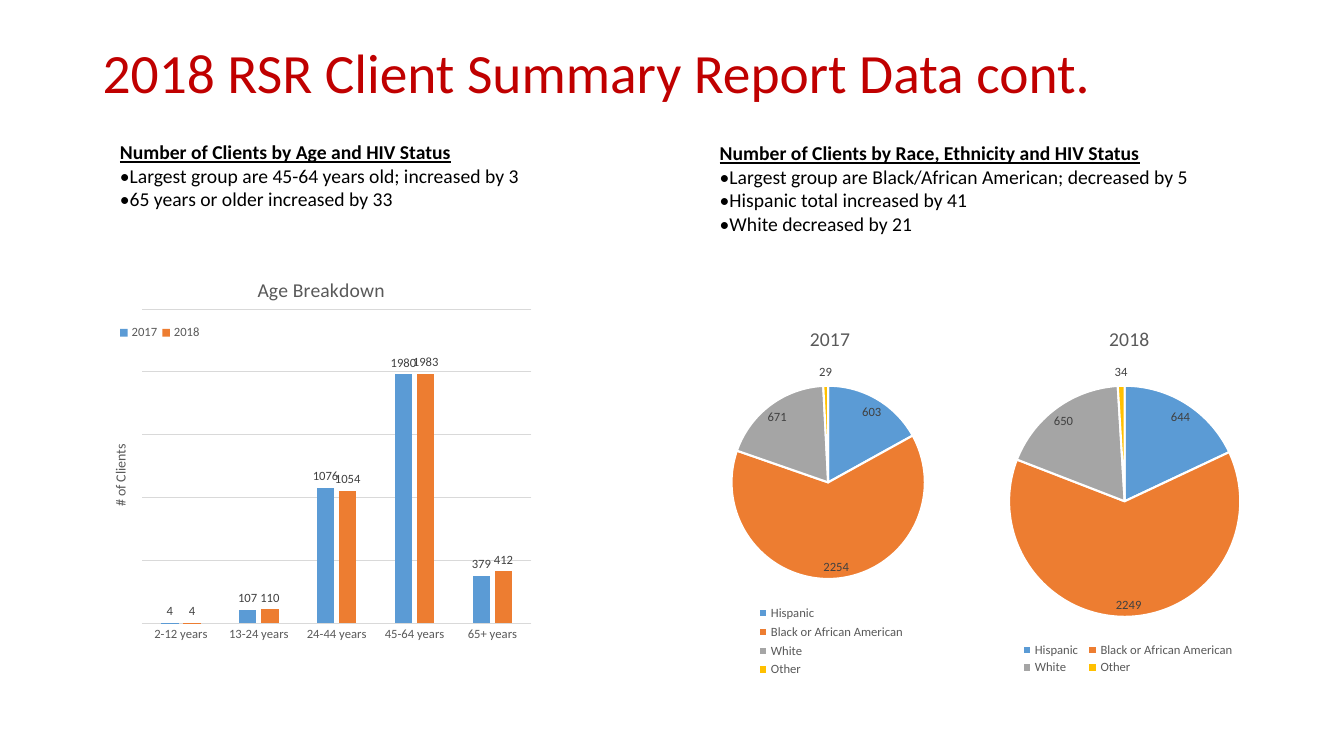
from lxml import etree
from pptx import Presentation
from pptx.chart import data as chart_data
from pptx.dml.color import RGBColor
from pptx.enum import chart as kinds, text
from pptx.oxml import ns
from pptx.util import Inches, Pt

FONT = "Calibri"
COLORS = {
    "title": "C00000", "body": "000000", "caption": "595959", "label": "404040",
    "grid": "D9D9D9", "white": "FFFFFF", "blue": "5B9BD5", "orange": "ED7D31",
    "gray": "A5A5A5", "gold": "FFC000",
}
TITLE = "2018 RSR Client Summary Report Data cont."
NOTES = [
    {"at": (1.09, 1.34, 4.61, 0.81), "wrap": True, "lines": [
        "Number of Clients by Age and HIV Status",
        "•Largest group are 45-64 years old; increased by 3",
        "•65 years or older increased by 33"]},
    {"at": (7.04, 1.35, 4.94, 1.04), "wrap": False, "lines": [
        "Number of Clients by Race, Ethnicity and HIV Status",
        "•Largest group are Black/African American; decreased by 5",
        "•Hispanic total increased by 41",
        "•White decreased by 21"]},
]
AGES = {
    "title": "Age Breakdown", "at": (0.92, 2.49, 4.44, 4.27),
    "categories": ["2-12 years", "13-24 years", "24-44 years", "45-64 years", "65+ years"],
    "series": {"2017": (4, 107, 1076, 1980, 379), "2018": (4, 110, 1054, 1983, 412)},
    "title_at": (0.36, 0.05), "plot_at": (0.11, 0.135, 0.87, 0.73),
    "legend_at": (0.05, 0.16, 0.2, 0.06),
}
RACES = ["Hispanic", "Black or African American", "White", "Other"]
PIES = [
    {"title": "2017", "at": (6.75, 3, 2.9, 3.76), "categories": RACES,
     "series": {"2017": (603, 2254, 671, 29)},
     "title_at": (0.43, 0.05), "plot_at": (0.17, 0.22, 0.67, 0.51),
     "legend_at": (0.24, 0.79, 0.55, 0.21)},
    {"title": "2018", "at": (9.58, 3, 3.15, 3.76), "categories": RACES,
     "series": {"2018": (644, 2249, 650, 34)},
     "title_at": (0.44, 0.05), "plot_at": (0.135, 0.22, 0.73, 0.61),
     "legend_at": (0.16, 0.89, 0.7, 0.1)},
]
SERIES_COLORS = ["blue", "orange"]
SLICE_COLORS = ["blue", "orange", "gray", "gold"]


def color(name):
    return RGBColor.from_string(COLORS[name])


def style(font, size, name, bold=False):
    font.name, font.size, font.bold = FONT, Pt(size), bold
    font.color.rgb = color(name)


def paint(part, name):
    part.format.fill.solid()
    part.format.fill.fore_color.rgb = color(name)


def add_text(page, at, lines, size, name, heading=False, wrap=True):
    frame = page.shapes.add_textbox(*map(Inches, at)).text_frame
    frame.word_wrap = wrap
    for index, line in enumerate(lines):
        para = frame.paragraphs[0] if index == 0 else frame.add_paragraph()
        span = para.add_run()
        span.text = line
        style(span.font, size, name, heading and index == 0)
        span.font.underline = heading and index == 0
    return frame


def place(element, fractions, inner=False):
    for old in element.findall(ns.qn("c:layout")):
        element.remove(old)
    layout = etree.Element(ns.qn("c:layout"))
    manual = etree.SubElement(layout, ns.qn("c:manualLayout"))
    settings = [("layoutTarget", "inner")] if inner else []
    settings += [("xMode", "edge"), ("yMode", "edge")]
    settings += zip("xywh", fractions)
    for tag, value in settings:
        etree.SubElement(manual, ns.qn("c:" + tag)).set("val", str(value))
    overlay = element.find(ns.qn("c:overlay"))
    if overlay is None:
        element.insert(0, layout)
    else:
        overlay.addprevious(layout)


def add_title(holder, words, size):
    span = holder.text_frame.paragraphs[0].add_run()
    span.text = words
    style(span.font, size, "caption")


def add_chart(page, content, kind, label_position):
    data = chart_data.CategoryChartData()
    data.categories = content["categories"]
    for name, values in content["series"].items():
        data.add_series(name, values)
    chart = page.shapes.add_chart(kind, *map(Inches, content["at"]), data).chart
    style(chart.font, 10, "body")
    chart.has_title = True
    add_title(chart.chart_title, content["title"], 14)
    chart.has_legend = True
    chart.legend.position = kinds.XL_LEGEND_POSITION.BOTTOM
    chart.legend.include_in_layout = False
    style(chart.legend.font, 9, "caption")
    for series in chart.plots[0].series:
        labels = series.data_labels
        labels.show_value = True
        labels.position = label_position
        style(labels.font, 9, "label")
    area = chart._chartSpace.chart
    place(area.find(ns.qn("c:title")), content["title_at"])
    place(area.find(ns.qn("c:legend")), content["legend_at"])
    place(area.plotArea, content["plot_at"], inner=True)
    return chart


def add_ages(page):
    chart = add_chart(page, AGES, kinds.XL_CHART_TYPE.COLUMN_CLUSTERED,
                      kinds.XL_LABEL_POSITION.OUTSIDE_END)
    plot = chart.plots[0]
    plot.gap_width, plot.overlap, plot.vary_by_categories = 219, -27, False
    for series, name in zip(plot.series, SERIES_COLORS):
        paint(series, name)
    across, up = chart.category_axis, chart.value_axis
    across.major_tick_mark = kinds.XL_TICK_MARK.NONE
    style(across.tick_labels.font, 9, "caption")
    up.visible = False
    up.minimum_scale, up.maximum_scale, up.major_unit = 0, 2500, 500
    up.has_major_gridlines = True
    for line in (across.format.line, up.major_gridlines.format.line):
        line.color.rgb = color("grid")
        line.width = Pt(0.75)
    up.has_title = True
    add_title(up.axis_title, "# of Clients", 10)


def add_pie(page, content):
    chart = add_chart(page, content, kinds.XL_CHART_TYPE.PIE,
                      kinds.XL_LABEL_POSITION.BEST_FIT)
    chart.plots[0].vary_by_categories = True
    for index, name in enumerate(SLICE_COLORS):
        point = chart.plots[0].series[0].points[index]
        paint(point, name)
        point.format.line.color.rgb = color("white")
        point.format.line.width = Pt(1.5)


def main():
    deck = Presentation()
    deck.slide_width, deck.slide_height = Inches(13.33), Inches(7.5)
    page = deck.slides.add_slide(deck.slide_layouts[6])
    heading = add_text(page, (0.92, 0.4, 11.5, 0.7), [TITLE], 39.6, "title")
    heading.vertical_anchor = text.MSO_ANCHOR.MIDDLE
    heading.paragraphs[0].line_spacing = 0.9
    for note in NOTES:
        add_text(page, note["at"], note["lines"], 14, "body", True, note["wrap"])
    add_ages(page)
    for content in PIES:
        add_pie(page, content)
    deck.save("out.pptx")


if __name__ == "__main__":
    main()
